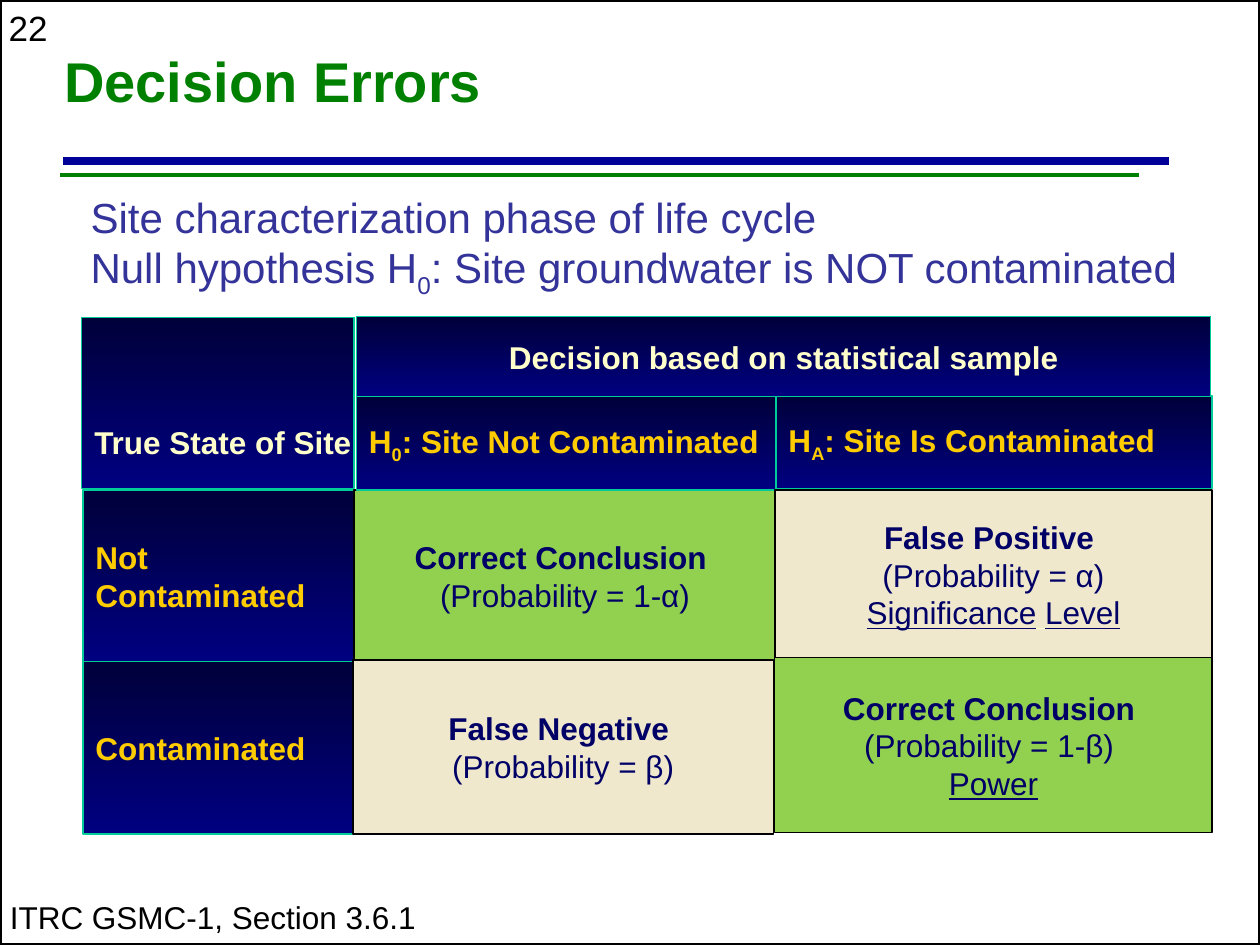
from lxml import etree
from pptx import Presentation
from pptx.dml.color import RGBColor
from pptx.enum.shapes import MSO_CONNECTOR, MSO_SHAPE
from pptx.enum.text import MSO_ANCHOR, PP_ALIGN
from pptx.oxml.ns import qn
from pptx.util import Inches, Pt

RECT = MSO_SHAPE.RECTANGLE
LINE = MSO_CONNECTOR.STRAIGHT
LEFT, CENTER = PP_ALIGN.LEFT, PP_ALIGN.CENTER
MIDDLE, BOTTOM = MSO_ANCHOR.MIDDLE, MSO_ANCHOR.BOTTOM

BLACK, GREEN, NAVY = "000000", "008000", "000066"
CREAM, GOLD, TEAL = "FFFFCC", "FFCC00", "00CC99"
GOOD, BAD = "92D050", "F0E8CC"
SUB = {"sub": True}
PLAIN = {"bold": False}
UNDER = {"bold": False, "under": True}


def rgb(code):
    return RGBColor.from_string(code)


def add_run(para, text, size, color, bold=False, under=False, sub=False):
    run = para.add_run()
    run.text = text
    font = run.font
    font.name, font.size, font.bold = "Arial", Pt(size), bold
    font.color.rgb = rgb(color)
    if under:
        font.underline = True
    if sub:
        run._r.get_or_add_rPr().set("baseline", "-25000")


def write(frame, paras, size, color, bold=False, align=LEFT):
    """Each paragraph is a list of (text, style changes) runs."""
    for i, runs in enumerate(paras):
        para = frame.paragraphs[0] if i == 0 else frame.add_paragraph()
        para.alignment = align
        for text, style in runs:
            look = {"color": color, "bold": bold, **style}
            add_run(para, text, size, **look)


def add_rule(slide, left, right, y, color, width):
    rule = slide.shapes.add_connector(
        LINE, Inches(left), Inches(y), Inches(right), Inches(y))
    rule.line.color.rgb = rgb(color)
    rule.line.width = Pt(width)
    etree.SubElement(rule._element.spPr, qn("a:effectLst"))


def add_label(slide, box, paras, size, color):
    label = slide.shapes.add_textbox(*map(Inches, box))
    label.text_frame.word_wrap = False
    write(label.text_frame, paras, size, color)


def add_box(slide, box, edge, width):
    shape = slide.shapes.add_shape(RECT, *map(Inches, box))
    shape.shadow.inherit = False
    shape.line.color.rgb = rgb(edge)
    shape.line.width = Pt(width)
    return shape


def add_head(slide, box, paras, color, align=LEFT):
    """Header cell with a dark vertical gradient."""
    cell = add_box(slide, box, TEAL, 0.75)
    cell.fill.gradient()
    cell.fill.gradient_angle = 270
    for stop, code in zip(cell.fill.gradient_stops, ("00003B", "000080")):
        stop.color.rgb = rgb(code)
    frame = cell.text_frame
    frame.word_wrap = False
    frame.vertical_anchor = MIDDLE
    write(frame, paras, 18, color, True, align)
    return frame


def add_result(slide, box, fill, paras, width=1):
    """Outcome cell with a plain fill."""
    cell = add_box(slide, box, BLACK, width)
    cell.fill.solid()
    cell.fill.fore_color.rgb = rgb(fill)
    frame = cell.text_frame
    frame.word_wrap = False
    frame.vertical_anchor = MIDDLE
    write(frame, paras, 18, NAVY, True, CENTER)


def add_title(slide, text):
    title = slide.shapes.title
    title.left, title.top = Inches(0.41), Inches(0.1)
    title.width, title.height = Inches(8.3), Inches(1.15)
    frame = title.text_frame
    frame.vertical_anchor = MIDDLE
    write(frame, [[(text, {})]], 32, GREEN, True)
    frame.paragraphs[0].line_spacing = 0.85


def add_grid(slide):
    # Row headers
    corner = add_head(slide, (0.65, 2.52, 2.16, 1.36),
                      [[("True State of Site", {})]], CREAM)
    corner.vertical_anchor = BOTTOM
    corner.margin_bottom = Inches(0.22)
    add_head(slide, (0.66, 3.89, 2.16, 1.36),
             [[("Not", {})], [("Contaminated", {})]], GOLD)
    add_head(slide, (0.66, 5.25, 2.16, 1.37), [[("Contaminated", {})]], GOLD)

    # First outcome and column headers
    add_result(slide, (2.81, 3.89, 3.35, 1.36), GOOD,
               [[("Correct Conclusion ", {})],
                [("(Probability = 1-α)", PLAIN)]])
    add_head(slide, (6.16, 3.14, 3.46, 0.74),
             [[("H", {}), ("A", SUB), (": Site Is Contaminated", {})]], GOLD)
    add_head(slide, (2.83, 3.15, 3.33, 0.74),
             [[("H", {}), ("0", SUB), (": Site Not Contaminated", {})]], GOLD)
    add_head(slide, (2.83, 2.51, 6.78, 0.64),
             [[("Decision based on statistical sample", {})]], CREAM, CENTER)

    # Other outcomes
    add_result(slide, (6.15, 3.89, 3.47, 1.34), BAD,
               [[("False Positive ", {})],
                [("(Probability = α)", PLAIN)],
                [("Significance", UNDER), (" ", {**UNDER, "color": CREAM}),
                 ("Level", UNDER)]])
    add_result(slide, (2.8, 5.24, 3.34, 1.38), BAD,
               [[("False Negative ", {})], [("(Probability = β)", PLAIN)]])
    add_result(slide, (6.15, 5.22, 3.47, 1.39), GOOD,
               [[("Correct Conclusion ", {})],
                [("(Probability = 1-β) ", PLAIN)],
                [("Power", UNDER)]], 0.75)


def main():
    deck = Presentation()
    deck.slide_width, deck.slide_height = Inches(10), Inches(7.5)
    slide = deck.slides.add_slide(deck.slide_layouts[5])

    # Page frame, rules and number
    add_rule(slide, 0.5, 9.28, 1.28, "000099", 4.5)
    add_rule(slide, 0.48, 9.04, 1.39, GREEN, 2)
    add_label(slide, (-0.03, 0, 0.54, 0.43), [[("22", {})]], 20, BLACK)
    add_box(slide, (0, 0, 10, 7.5), BLACK, 2).fill.background()

    add_title(slide, "Decision Errors")
    add_grid(slide)

    # Source and introduction
    add_label(slide, (-0.02, 7.08, 3.45, 0.4),
              [[("ITRC GSMC-1, Section 3.6.1", {})]], 18, BLACK)
    add_label(slide, (0.62, 1.47, 9.18, 0.91),
              [[("Site characterization phase of life cycle", {})],
               [("Null hypothesis H", {}), ("0", SUB),
                (": Site groundwater is NOT contaminated", {})]],
              24, "333399")
    deck.save("out.pptx")


if __name__ == "__main__":
    main()
